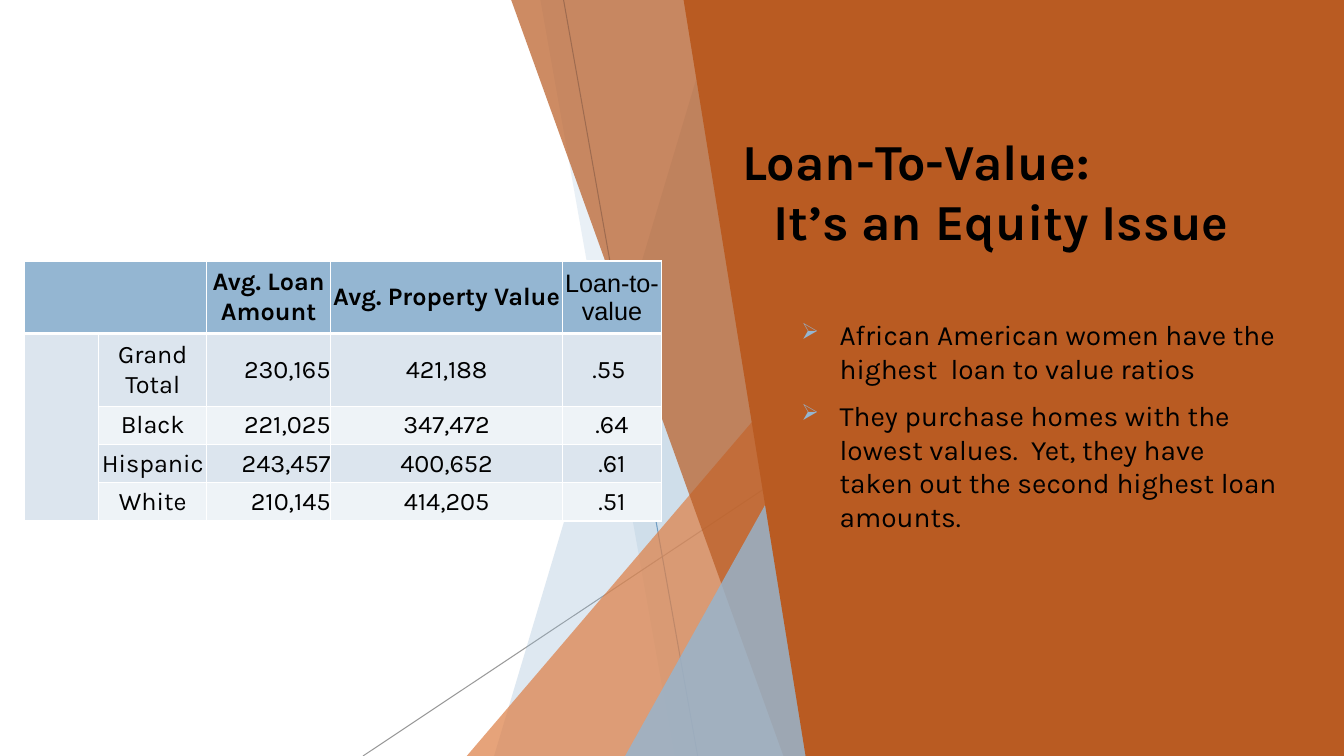
from dataclasses import dataclass

from lxml.etree import SubElement
from pptx import Presentation
from pptx.dml.color import RGBColor
from pptx.enum.shapes import MSO_CONNECTOR as Link, MSO_SHAPE as Kind
from pptx.enum.text import MSO_ANCHOR as Anchor, MSO_AUTO_SIZE as Fit, PP_ALIGN as Align
from pptx.oxml.ns import qn
from pptx.util import Inches, Pt


@dataclass(frozen=True)
class Theme:
    ink: str = "000000"
    white: str = "FFFFFF"
    sky: str = "94B6D2"
    steel: str = "558BB8"
    gray: str = "808080"
    peach: str = "DD8047"
    rust: str = "B95B22"
    band: str = "DCE5EE"
    pale: str = "EEF3F7"
    font: str = "Karla"
    plain: str = "Arial"
    head: int = 36
    body: int = 20
    cell: int = 18


T = Theme()

HEADS = ["", "", "Avg. Loan Amount", "Avg. Property Value", "Loan-to-value"]
ROWS = [
    ["", "Grand Total", "230,165", "421,188", ".55 "],
    ["", "Black", "221,025", "347,472", ".64"],
    ["", "Hispanic", "243,457", "400,652", ".61"],
    ["", "White", "210,145", "414,205", ".51"],
]
POINTS = [
    "African American women have the highest  loan to value ratios",
    "They purchase homes with the lowest values.  Yet, they have taken out "
    "the second highest loan amounts.",
]


def fade(fill, alpha):
    """Set the opacity, in percent, of a solid fill element."""
    SubElement(fill[0], qn("a:alpha")).set("val", str(alpha * 1000))


def paint(shape, color, alpha=100):
    shape.shadow.inherit = False
    shape.fill.solid()
    shape.fill.fore_color.rgb = RGBColor.from_string(color)
    shape.line.fill.background()
    if alpha < 100:
        fade(shape._element.spPr.find(qn("a:solidFill")), alpha)


def write(para, text, size, font=T.font, color=T.ink, bold=False,
          align=Align.LEFT, before=0, hang=0, bullet=None):
    props = para._p.get_or_add_pPr()
    if hang:
        props.set("marL", str(Inches(hang)))
        props.set("indent", str(-Inches(hang)))
    if bullet:
        tint = SubElement(props, qn("a:buClr"))
        SubElement(tint, qn("a:srgbClr")).set("val", T.sky)
        SubElement(props, qn("a:buSzPct")).set("val", "80000")
        SubElement(props, qn("a:buChar")).set("char", bullet)
    para.text = text
    para.alignment = align
    para.space_before = Pt(before)
    for run in para.runs:
        run.font.size = Pt(size)
        run.font.name = font
        run.font.bold = bold
        run.font.color.rgb = RGBColor.from_string(color)


def sliver(slide, box, top, foot, color, alpha=100):
    """Fill the box to the right of a slanted edge from top to foot."""
    x, y, w, h = box
    pen = slide.shapes.build_freeform(Inches(x + top), Inches(y))
    pen.add_line_segments([(Inches(a), Inches(b)) for a, b in
                           [(x + w, y), (x + w, y + h), (x + foot, y + h)]])
    paint(pen.convert_to_shape(), color, alpha)


def wedge(slide, box, wide, tall, color, alpha):
    """Put a right triangle in the lower right corner of the box."""
    x, y, w, h = box
    shape = slide.shapes.add_shape(Kind.ISOSCELES_TRIANGLE, Inches(x + w - wide),
                                   Inches(y + h - tall), Inches(wide), Inches(tall))
    shape.adjustments[0] = 1
    paint(shape, color, alpha)


def thread(slide, box, start, end, color, alpha=100):
    x, y = box[:2]
    line = slide.shapes.add_connector(
        Link.STRAIGHT, Inches(x + start[0]), Inches(y + start[1]),
        Inches(x + end[0]), Inches(y + end[1]))
    line.line.color.rgb = RGBColor.from_string(color)
    line.line.width = Pt(0.75)
    if alpha < 100:
        fade(line.line._ln.find(qn("a:solidFill")), alpha)
    SubElement(line._element.spPr, qn("a:effectLst"))


def draw_fan(slide, box):
    high = box[3]
    thread(slide, box, (0.96, 0), (2.29, high), T.steel)
    thread(slide, box, (4.18, 4.03), (-1.03, high), T.gray, 80)
    sliver(slide, box, 2.51, 0.27, T.sky, 30)
    sliver(slide, box, 0.73, 2.06, T.sky, 20)
    wedge(slide, box, 3.56, 4.17, T.peach, 72)
    sliver(slide, box, 0.44, 3.14, T.rust, 70)
    wedge(slide, box, 1.99, 3.57, T.sky, 80)


def draw_title(slide, box):
    title = slide.shapes.title
    title.left, title.top, title.width, title.height = map(Inches, box)
    frame = title.text_frame
    frame.auto_size = Fit.NONE
    frame.vertical_anchor = Anchor.MIDDLE
    write(frame.paragraphs[0], "Loan-To-Value:\vIt’s an Equity Issue",
          T.head, bold=True, hang=0.31)


def draw_points(slide, box):
    frame = slide.shapes.add_textbox(*map(Inches, box)).text_frame
    frame.word_wrap = True
    for i, text in enumerate(POINTS):
        para = frame.add_paragraph() if i else frame.paragraphs[0]
        write(para, text, T.body, before=10 if i else 0, hang=0.38, bullet="➢")


def edge(cell, foot):
    """Draw white borders, the lower one foot points wide."""
    props = cell._tc.get_or_add_tcPr()
    for i, (side, wide) in enumerate(zip("LRTB", (1, 1, 1, foot))):
        line = SubElement(props, qn("a:ln" + side), w=str(Pt(wide)))
        fill = SubElement(line, qn("a:solidFill"))
        SubElement(fill, qn("a:srgbClr")).set("val", T.white)
        props.insert(i, line)


def draw_table(slide, box):
    cols = [0.74, 1.07, 1.23, 2.3, 0.98]
    highs = [0.72, 0.72, 0.38, 0.38, 0.38]
    grid = slide.shapes.add_table(len(highs), len(cols), *map(Inches, box)).table
    for col, wide in zip(grid.columns, cols):
        col.width = Inches(wide)
    for row, high in zip(grid.rows, highs):
        row.height = Inches(high)
    for r, texts in enumerate([HEADS] + ROWS):
        for c, text in enumerate(texts):
            cell = grid.cell(r, c)
            cell.margin_left = cell.margin_right = 0
            cell.margin_top = cell.margin_bottom = 0
            cell.vertical_anchor = Anchor.MIDDLE
            cell.fill.solid()
            tint = T.sky if r == 0 else T.band if r % 2 or c == 0 else T.pale
            cell.fill.fore_color.rgb = RGBColor.from_string(tint)
            edge(cell, 1 if r else 3)
            if text:
                write(cell.text_frame.paragraphs[0], text, T.cell,
                      font=T.plain if c == 4 and r == 0 else T.font,
                      bold=r == 0 and c < 4,
                      align=Align.RIGHT if r and c == 2 else Align.CENTER)
    grid.cell(0, 0).merge(grid.cell(0, 1))
    grid.cell(1, 0).merge(grid.cell(4, 0))


def main():
    deck = Presentation()
    deck.slide_width, deck.slide_height = Inches(13.33), Inches(7.5)
    slide = deck.slides.add_slide(deck.slide_layouts[5])
    draw_fan(slide, (4.63, 0, 3.56, 7.5))
    sliver(slide, (6.78, 0, 6.55, 7.5), 0, 1.21, T.rust)
    draw_title(slide, (7.26, 0.67, 5.53, 2.44))
    draw_points(slide, (7.85, 3.1, 4.94, 3.63))
    draw_table(slide, (0.24, 2.59, 6.32, 2.58))
    # The title starts at the back, so it is moved in front of the panel.
    slide.shapes._spTree.append(slide.shapes.title._element)
    deck.save("out.pptx")


if __name__ == "__main__":
    main()
